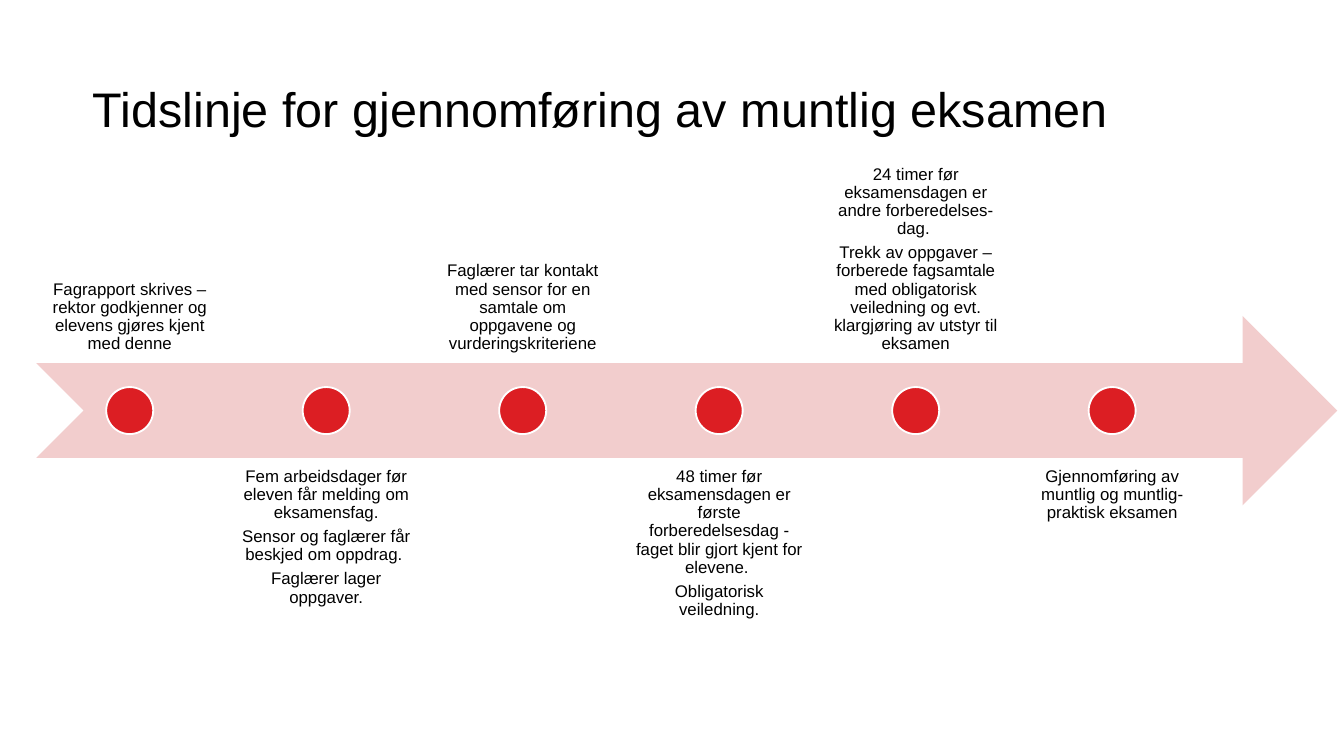
from dataclasses import dataclass

from pptx import Presentation
from pptx import util as u
from pptx.dml.color import RGBColor
from pptx.enum import shapes, text

BLACK = RGBColor(0x00, 0x00, 0x00)
WHITE = RGBColor(0xFF, 0xFF, 0xFF)
RED = RGBColor(0xDC, 0x1E, 0x23)
PINK = RGBColor(0xF2, 0xCD, 0xCD)
FONT = "Arial"

LEFT, LAST, WIDTH, HEIGHT = 0.27, 7.58, 1.39, 1.41
ABOVE, BELOW = 1.29, 3.41
DOT, DOT_TOP = 0.35, 2.88


@dataclass
class Label:
    lines: list[str]
    left: float
    top: float
    width: float
    height: float
    size: float
    side: float
    edge: float
    anchor: text.MSO_ANCHOR
    align: text.PP_ALIGN
    after: float = 0


STEPS = [
    ["Fagrapport skrives – rektor godkjenner og elevens gjøres kjent med denne"],
    [
        "Fem arbeidsdager før eleven får melding om eksamensfag.",
        "Sensor og faglærer får beskjed om oppdrag. ",
        "Faglærer lager oppgaver.",
    ],
    ["Faglærer tar kontakt med sensor for en samtale om oppgavene og vurderingskriteriene"],
    [
        "48 timer før eksamensdagen er første forberedelsesdag - "
        "faget blir gjort kjent for elevene. ",
        "Obligatorisk veiledning.",
    ],
    [
        "24 timer før eksamensdagen er andre forberedelses-dag. ",
        "Trekk av oppgaver – forberede fagsamtale med obligatorisk veiledning "
        "og evt. klargjøring av utstyr til eksamen",
    ],
    ["Gjennomføring av muntlig og muntlig-praktisk eksamen"],
]
STEP = (LAST - LEFT) / (len(STEPS) - 1)


def draw_label(slide, label: Label) -> None:
    box = slide.shapes.add_textbox(
        u.Inches(label.left), u.Inches(label.top),
        u.Inches(label.width), u.Inches(label.height),
    )
    frame = box.text_frame
    frame.word_wrap = True
    frame.vertical_anchor = label.anchor
    frame.margin_left = frame.margin_right = u.Inches(label.side)
    frame.margin_top = frame.margin_bottom = u.Inches(label.edge)
    frame.text = "\n".join(label.lines)
    for para in frame.paragraphs:
        para.alignment = label.align
        para.line_spacing = 0.9
        para.space_after = u.Pt(label.after)
        for run in para.runs:
            run.font.name = FONT
            run.font.size = u.Pt(label.size)
            run.font.color.rgb = BLACK


def draw_shape(slide, kind: shapes.MSO_SHAPE, left: float, top: float,
               width: float, height: float, fill: RGBColor):
    shape = slide.shapes.add_shape(
        kind, u.Inches(left), u.Inches(top), u.Inches(width), u.Inches(height)
    )
    shape.shadow.inherit = False
    shape.fill.solid()
    shape.fill.fore_color.rgb = fill
    shape.line.fill.background()
    return shape


def draw_step(slide, index: int, lines: list[str]) -> None:
    left = LEFT + index * STEP
    high = index % 2 == 0
    anchor = text.MSO_ANCHOR.BOTTOM if high else text.MSO_ANCHOR.TOP
    draw_label(slide, Label(
        lines, left, ABOVE if high else BELOW, WIDTH, HEIGHT,
        9, 0.06, 0.07, anchor, text.PP_ALIGN.CENTER, 3.15,
    ))
    dot = draw_shape(slide, shapes.MSO_SHAPE.OVAL,
                     left + (WIDTH - DOT) / 2, DOT_TOP, DOT, DOT, RED)
    dot.line.color.rgb = WHITE
    dot.line.width = u.Pt(1)


def main() -> None:
    deck = Presentation()
    deck.slide_width = u.Inches(10)
    deck.slide_height = deck.slide_width * 9 // 16
    slide = deck.slides.add_slide(deck.slide_layouts[6])
    draw_label(slide, Label(
        ["Tidslinje for gjennomføring av muntlig eksamen"],
        0.69, 0.38, 8.62, 0.91, 26, 0, 0,
        text.MSO_ANCHOR.MIDDLE, text.PP_ALIGN.LEFT,
    ))
    draw_shape(slide, shapes.MSO_SHAPE.NOTCHED_RIGHT_ARROW,
               LEFT, 2.35, 9.68, HEIGHT, PINK)
    for index, lines in enumerate(STEPS):
        draw_step(slide, index, lines)
    deck.save("out.pptx")


if __name__ == "__main__":
    main()
